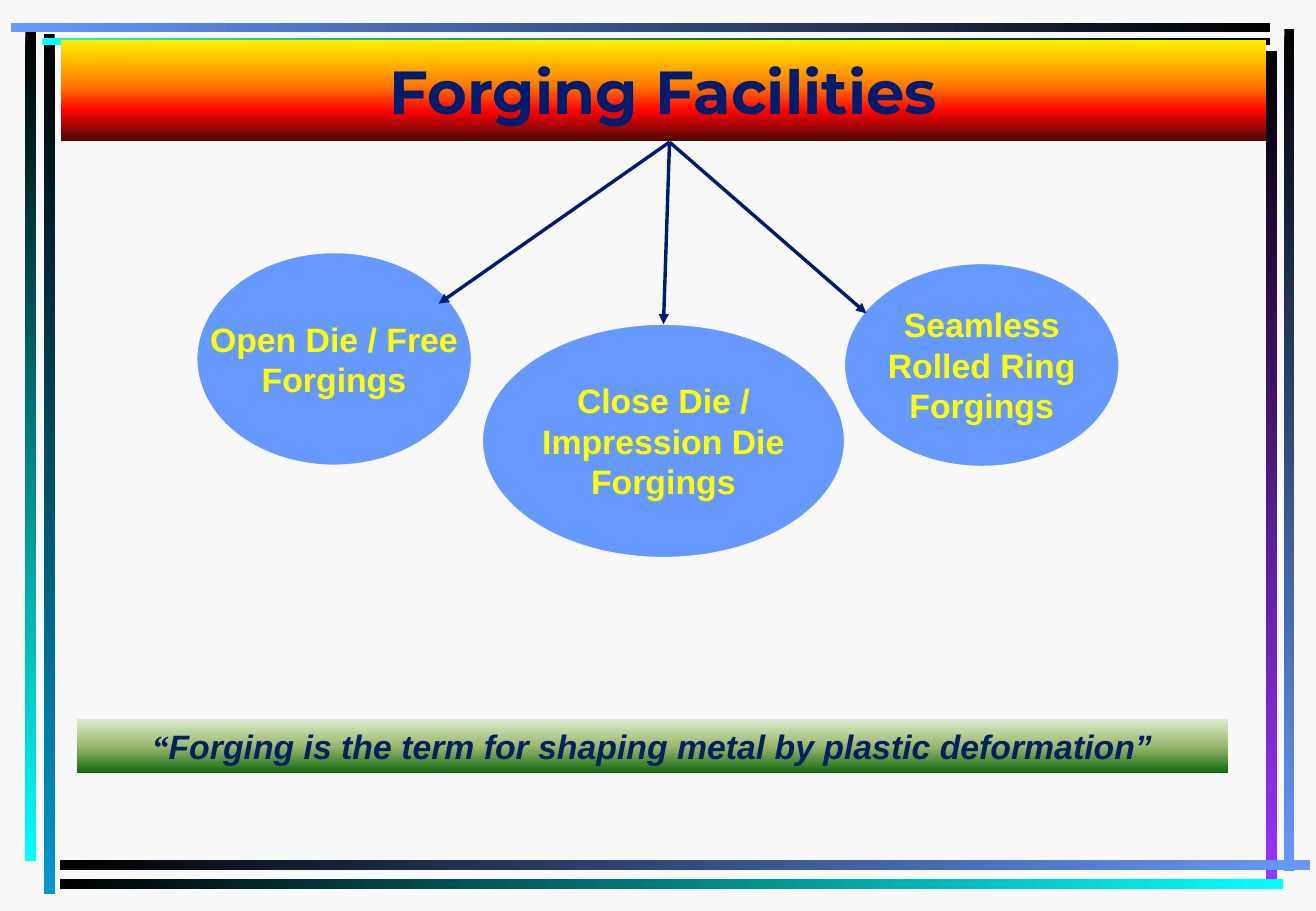
import pptx
import pptx.dml.color
import pptx.enum.shapes
import pptx.enum.text
import pptx.oxml.ns
import pptx.oxml.xmlchemy
import pptx.util
import lxml.etree

RGBColor = pptx.dml.color.RGBColor
SHAPE = pptx.enum.shapes.MSO_SHAPE
CENTER = pptx.enum.text.PP_ALIGN.CENTER
qn = pptx.oxml.ns.qn

PAPER = RGBColor(0xF8, 0xF8, 0xF8)
BLACK = RGBColor(0x00, 0x00, 0x00)
OCEAN = RGBColor(0x00, 0x99, 0xCC)
CYAN = RGBColor(0x00, 0xFF, 0xFF)
BLUE = RGBColor(0x66, 0x99, 0xFF)
PURPLE = RGBColor(0x99, 0x33, 0xFF)
YELLOW = RGBColor(0xFF, 0xFF, 0x00)
NAVY = RGBColor(0x00, 0x1C, 0x6E)
DARK_BLUE = RGBColor(0x00, 0x20, 0x60)
FIRE = [
    (0, RGBColor(0xFF, 0xF2, 0x00)),
    (45, RGBColor(0xFF, 0x7A, 0x00)),
    (70, RGBColor(0xFF, 0x03, 0x00)),
    (100, RGBColor(0x4D, 0x08, 0x08)),
]
GREEN = [
    (0, RGBColor(0xDD, 0xEB, 0xCF)),
    (50, RGBColor(0x9C, 0xB8, 0x6E)),
    (100, RGBColor(0x15, 0x6B, 0x13)),
]

TITLE_FONT = {"name": "Montserrat", "size": pptx.util.Pt(36), "bold": True}
LABEL_FONT = {"name": "Arial", "size": pptx.util.Pt(20), "bold": True}
QUOTE_FONT = {**LABEL_FONT, "italic": True}
QUOTE_MARK_FONT = {**QUOTE_FONT, "name": "Times New Roman"}

FRAME_BARS = [
    (36, 28, 9, 708, BLACK, OCEAN),
    (21, 25, 9, 684, BLACK, CYAN),
    (1057, 24, 8, 693, BLACK, BLUE),
    (1042, 42, 9, 683, BLACK, PURPLE),
    (49, 708, 1029, 8, BLACK, BLUE),
    (49, 724, 1007, 8, BLACK, CYAN),
    (35, 31, 1010, 6, CYAN, BLACK),
    (9, 19, 1036, 7, BLUE, BLACK),
]
FACILITIES = [
    ((162, 208, 226, 175), ["Open Die / Free", "Forgings"], (361, 250)),
    ((397, 267, 298, 192), ["Close Die /", "Impression Die", "Forgings"], (546, 267)),
    ((695, 217, 226, 167), ["Seamless", "Rolled Ring", "Forgings"], (713, 258)),
]
ARROW_START = (551, 117)


class SlideBuilder:
    scale = 9144

    def __init__(self, deck):
        self.page = deck.slides.add_slide(deck.slide_layouts[5])
        self.page.background.fill.solid()
        self.page.background.fill.fore_color.rgb = PAPER

    def emu(self, lengths):
        return [length * self.scale for length in lengths]

    def gradient(self, shape, stops, angle):
        shape.fill.gradient()
        shape.fill.gradient_angle = angle
        stop_list = shape.fill._xPr.find(".//" + qn("a:gsLst"))
        stop_list.clear()
        for position, color in stops:
            stop = lxml.etree.SubElement(stop_list, qn("a:gs"), pos=str(position * 1000))
            lxml.etree.SubElement(stop, qn("a:srgbClr"), val=str(color))

    def span(self, para, text, color, font_values):
        span = para.add_run()
        span.text = text
        for name, value in font_values.items():
            setattr(span.font, name, value)
        span.font.color.rgb = color

    def shape(self, kind, bounds):
        shape = self.page.shapes.add_shape(kind, *self.emu(bounds))
        shape.shadow.inherit = False
        shape.line.fill.background()
        return shape

    def bar(self, left, top, width, height, first, last):
        bar = self.shape(SHAPE.RECTANGLE, (left, top, width, height))
        self.gradient(bar, [(0, first), (100, last)], 0 if width > height else 270)

    def ellipse(self, bounds, lines):
        ellipse = self.shape(SHAPE.OVAL, bounds)
        ellipse.fill.solid()
        ellipse.fill.fore_color.rgb = BLUE
        ellipse.line.color.rgb = PAPER
        ellipse.line.width = pptx.util.Pt(0.75)
        frame = ellipse.text_frame
        frame.word_wrap = False
        frame.vertical_anchor = pptx.enum.text.MSO_ANCHOR.MIDDLE
        for index, line in enumerate(lines):
            para = frame.add_paragraph() if index else frame.paragraphs[0]
            para.alignment = CENTER
            para.line_spacing = pptx.util.Pt(24)
            self.span(para, line, YELLOW, LABEL_FONT)

    def arrow(self, start, end):
        arrow = self.page.shapes.add_connector(
            pptx.enum.shapes.MSO_CONNECTOR.STRAIGHT, *self.emu(start + end)
        )
        arrow.line.color.rgb = NAVY
        arrow.line.width = pptx.util.Pt(2)
        lxml.etree.SubElement(arrow.line._get_or_add_ln(), qn("a:tailEnd"), type="triangle")
        lxml.etree.SubElement(arrow._element.spPr, qn("a:effectLst"))

    def quote(self, bounds, mark, text):
        box = self.shape(SHAPE.RECTANGLE, bounds)
        self.gradient(box, GREEN, 270)
        box.text_frame.word_wrap = True
        para = box.text_frame.paragraphs[0]
        para.alignment = CENTER
        self.span(para, mark, DARK_BLUE, QUOTE_MARK_FONT)
        self.span(para, text, DARK_BLUE, QUOTE_FONT)

    def title(self, bounds, text):
        title = self.page.shapes.title
        title.left, title.top, title.width, title.height = self.emu(bounds)
        self.gradient(title, FIRE, 270)
        frame = title.text_frame
        frame.auto_size = pptx.enum.text.MSO_AUTO_SIZE.NONE
        frame.vertical_anchor = pptx.enum.text.MSO_ANCHOR.MIDDLE
        frame.paragraphs[0].alignment = CENTER
        self.span(frame.paragraphs[0], text, NAVY, TITLE_FONT)
        self.page.shapes._spTree.append(title._element)


def main():
    deck = pptx.Presentation()
    deck.slide_width, deck.slide_height = 1083 * SlideBuilder.scale, 750 * SlideBuilder.scale
    builder = SlideBuilder(deck)
    for bar in FRAME_BARS:
        builder.bar(*bar)
    for bounds, lines, arrow_end in FACILITIES:
        builder.ellipse(bounds, lines)
        builder.arrow(ARROW_START, arrow_end)
    builder.quote(
        (63, 592, 948, 44),
        "“",
        "Forging is the term for shaping metal by plastic deformation”",
    )
    builder.title((50, 33, 992, 83), "Forging Facilities")
    deck.save("out.pptx")


if __name__ == "__main__":
    main()
